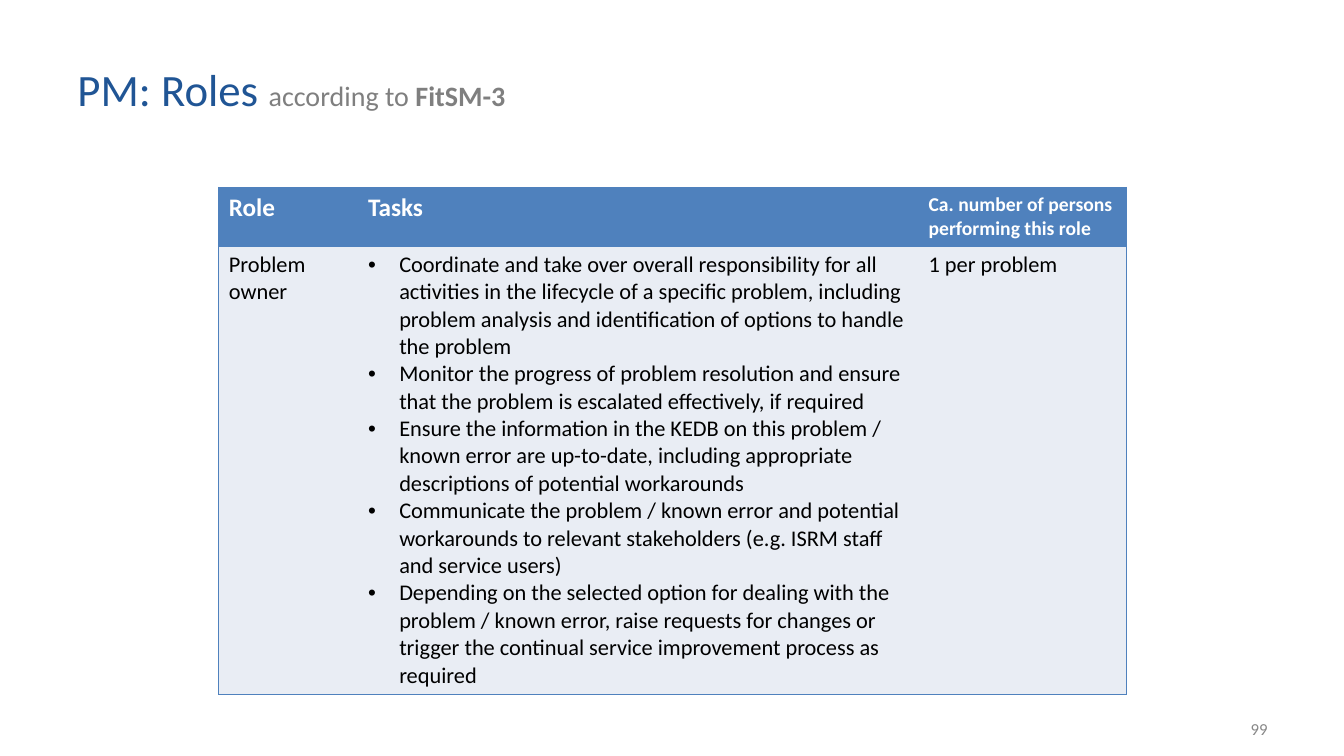
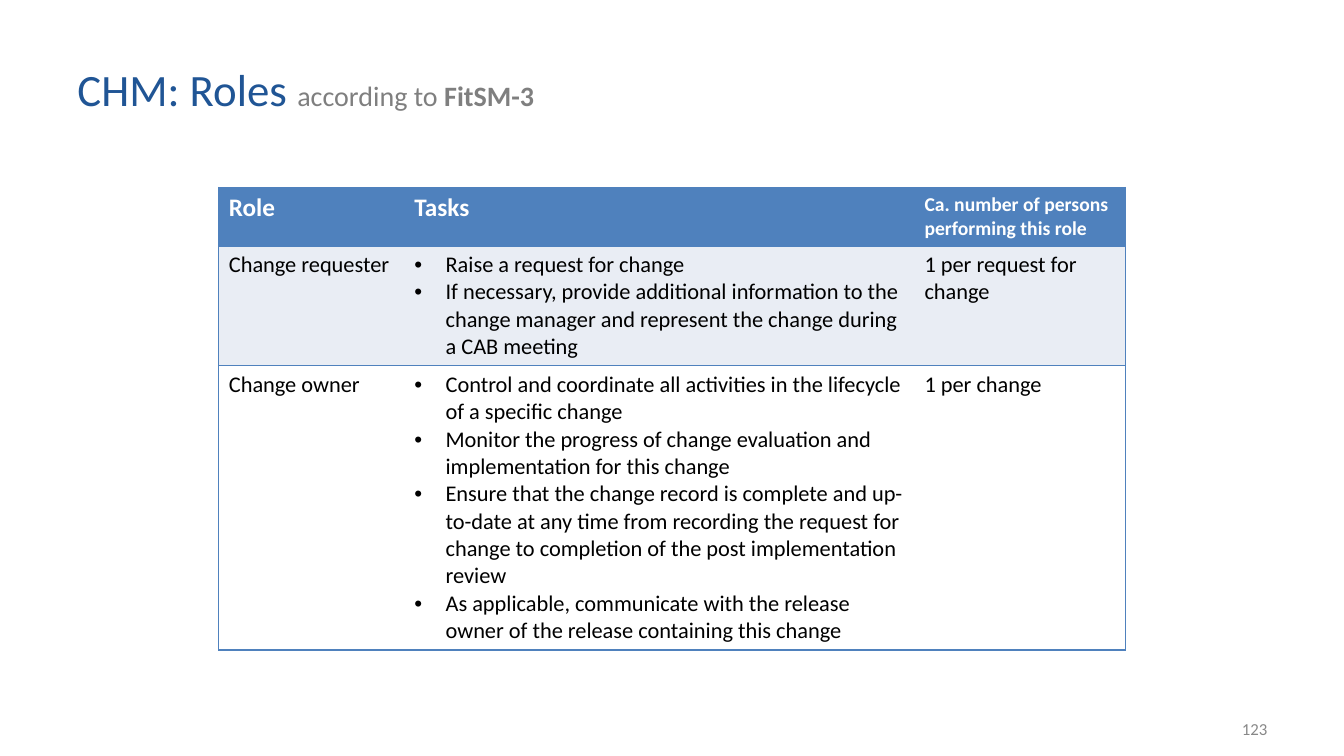
from lxml import etree
from pptx import Presentation
from pptx.dml.color import RGBColor
from pptx.enum.text import MSO_ANCHOR, PP_ALIGN
from pptx.oxml import parse_xml
from pptx.oxml.ns import nsdecls, qn
from pptx.util import Inches, Pt

FONT = "Calibri"
NAVY = RGBColor(0x20, 0x55, 0x95)
BLUE = RGBColor(0x4F, 0x81, 0xBD)
BAND = RGBColor(0xE9, 0xED, 0xF4)
GRAY = RGBColor(0x7F, 0x7F, 0x7F)
NUMBER_GRAY = RGBColor(0x88, 0x88, 0x88)
WHITE = RGBColor(0xFF, 0xFF, 0xFF)
BLACK = RGBColor(0, 0, 0)

HEADER = ("Role", "Tasks", "Ca. number of persons performing this role")
HEADER_SIZES = (18, 18, 14)
HEADER_HEIGHT = 0.58

# Each role: name, tasks, number of persons, row height
SLIDES = [
    {
        "process": "PM", "number": "99", "widths": (1.38, 5.56, 2.06),
        "roles": [
            ("Problem owner", [
                "Coordinate and take over overall responsibility for all activities in the lifecycle of a "
                "specific problem, including problem analysis and identification of options to handle the problem",
                "Monitor the progress of problem resolution and ensure that the problem is escalated "
                "effectively, if required",
                "Ensure the information in the KEDB on this problem / known error are up-to-date, including "
                "appropriate descriptions of potential workarounds",
                "Communicate the problem / known error and potential workarounds to relevant stakeholders "
                "(e.g. ISRM staff and service users)",
                "Depending on the selected option for dealing with the problem / known error, raise requests "
                "for changes or trigger the continual service improvement process as required",
            ], "1 per problem", 4.45),
        ],
    },
    {
        "process": "CHM", "number": "123", "widths": (1.84, 5.06, 2.09),
        "roles": [
            ("Change requester", [
                "Raise a request for change",
                "If necessary, provide additional information to the change manager and represent the change "
                "during a CAB meeting",
            ], "1 per request for change", 1.19),
            ("Change owner", [
                "Control and coordinate all activities in the lifecycle of a specific change",
                "Monitor the progress of change evaluation and implementation for this change",
                "Ensure that the change record is complete and up-to-date at any time from recording the "
                "request for change to completion of the post implementation review",
                "As applicable, communicate with the release owner of the release containing this change",
            ], "1 per change", 2.82),
        ],
    },
]


def add_text_box(page, left, top, width, height):
    box = page.shapes.add_textbox(Inches(left), Inches(top), Inches(width), Inches(height))
    box.text_frame.word_wrap = True
    box.text_frame.vertical_anchor = MSO_ANCHOR.MIDDLE
    para = box.text_frame.paragraphs[0]
    para.font.name = FONT
    return para


def fill_cell(cell, lines, size, color, fill, edges, bold=False, bullets=False):
    # Borders: a line on the listed edges, none on the others
    properties = cell._tc.get_or_add_tcPr()
    for edge in "LRTB":
        paint = f'<a:solidFill><a:srgbClr val="{BLUE}"/></a:solidFill>' if edge in edges else "<a:noFill/>"
        properties.append(parse_xml(f'<a:ln{edge} {nsdecls("a")} w="12700">{paint}</a:ln{edge}>'))
    cell.fill.solid()
    cell.fill.fore_color.rgb = fill
    cell.text_frame.text = "\n".join(lines)
    for para in cell.text_frame.paragraphs:
        if bullets:
            layout = para._p.get_or_add_pPr()
            layout.set("marL", str(Inches(0.31)))
            layout.set("indent", str(-Inches(0.31)))
            etree.SubElement(layout, qn("a:buFont")).set("typeface", "Arial")
            etree.SubElement(layout, qn("a:buChar")).set("char", "•")
        para.font.name = FONT
        para.font.size = Pt(size)
        para.font.bold = bold
        para.font.color.rgb = color


deck = Presentation()
deck.slide_width, deck.slide_height = Inches(13.33), Inches(7.5)

for content in SLIDES:
    page = deck.slides.add_slide(deck.slide_layouts[6])

    # Title
    title = add_text_box(page, 0.67, 0.3, 9.91, 1.15)
    for text, size, color, bold in [
        (f"{content['process']}: Roles ", 32, NAVY, False),
        ("according to ", 20, GRAY, False),
        ("FitSM-3", 20, GRAY, True),
    ]:
        span = title.add_run()
        span.text = text
        span.font.size = Pt(size)
        span.font.color.rgb = color
        span.font.bold = bold

    # Role table
    roles = content["roles"]
    heights = [HEADER_HEIGHT] + [role[3] for role in roles]
    table = page.shapes.add_table(
        len(heights), len(HEADER), Inches(2.17), Inches(1.86), Inches(9), Inches(sum(heights))
    ).table
    table.horz_banding = False
    for column, width in zip(table.columns, content["widths"]):
        column.width = Inches(width)
    for row, height in zip(table.rows, heights):
        row.height = Inches(height)

    column_edges = ("LTB", "TB", "RTB")
    for index, edges in enumerate(column_edges):
        fill_cell(table.cell(0, index), [HEADER[index]], HEADER_SIZES[index], WHITE, BLUE, edges, bold=True)
    for row_index, (name, tasks, persons, _) in enumerate(roles, start=1):
        fill = BAND if row_index % 2 else WHITE
        for index, lines in enumerate(([name], tasks, [persons])):
            fill_cell(table.cell(row_index, index), lines, 16, BLACK, fill, column_edges[index],
                      bullets=index == 1)

    # Slide number
    number = add_text_box(page, 9.56, 7.03, 3.11, 0.4)
    number.text = content["number"]
    number.alignment = PP_ALIGN.RIGHT
    number.font.size = Pt(12)
    number.font.color.rgb = NUMBER_GRAY

deck.save("out.pptx")
